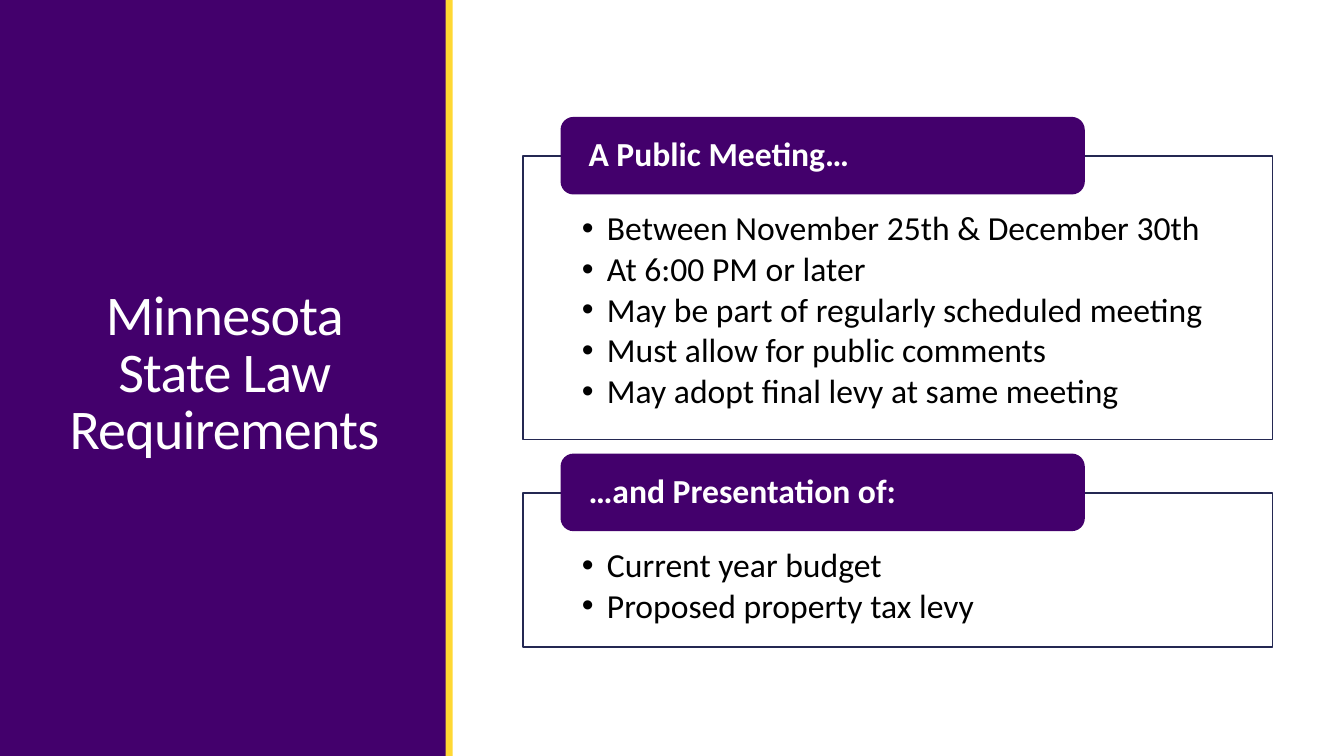
from pptx import Presentation
from pptx.dml.color import RGBColor
from pptx.enum.shapes import MSO_SHAPE as Preset
from pptx.enum.text import MSO_ANCHOR as Anchor, MSO_AUTO_SIZE as AutoSize, PP_ALIGN as Align
from pptx.util import Inches, Pt

PURPLE, GOLD, NAVY = "43006C", "FFD833", "242852"
WHITE, BLACK = "FFFFFF", "000000"


def colour(hex_code):
    return RGBColor.from_string(hex_code)


class Deck:
    font = "Calibri"
    heading_size, text_size = 40, 24

    def __init__(self, width, height):
        self.presentation = Presentation()
        self.presentation.slide_width = Inches(width)
        self.presentation.slide_height = Inches(height)
        layout = self.presentation.slide_layouts.get_by_name("Two Content")
        self.slide = self.presentation.slides.add_slide(layout)

    def place(self, shape, left, top, width, height):
        shape.left, shape.top = Inches(left), Inches(top)
        shape.width, shape.height = Inches(width), Inches(height)

    def frame(self, shape, anchor, insets):
        frame = shape.text_frame
        frame.word_wrap = True
        frame.auto_size = AutoSize.NONE
        frame.vertical_anchor = anchor
        frame.margin_left, frame.margin_top, frame.margin_right, frame.margin_bottom = map(Inches, insets)
        return frame

    def style(self, paragraph, size, hex_code, align=Align.LEFT, spacing=0.9, after=0, bold=False):
        paragraph.alignment = align
        paragraph.line_spacing = spacing
        paragraph.space_before, paragraph.space_after = Pt(0), Pt(after)
        font = paragraph.font
        font.name, font.size, font.bold = self.font, Pt(size), bold
        font.color.rgb = colour(hex_code)

    def block(self, preset, box, fill):
        block = self.slide.shapes.add_shape(preset, *map(Inches, box))
        block.shadow.inherit = False
        block.fill.solid()
        block.fill.fore_color.rgb = colour(fill)
        block.line.fill.background()
        return block

    def title(self, text, box):
        title = self.slide.shapes.title
        self.place(title, *box)
        frame = self.frame(title, Anchor.MIDDLE, (0.1, 0.05, 0.1, 0.05))
        frame.text = text
        paragraph = frame.paragraphs[0]
        self.style(paragraph, self.heading_size, WHITE, Align.CENTER, 0.85)
        paragraph.runs[0].font._element.set("spc", "-50")
        self.slide.shapes.element.append(title.element)

    def bullets(self, index, items, box):
        bullets = self.slide.placeholders[index]
        self.place(bullets, *box)
        bullets.line.color.rgb = colour(NAVY)
        bullets.line.width = Pt(1.25)
        frame = self.frame(bullets, Anchor.TOP, (0.58, 0.55, 0.58, 0.19))
        frame.text = "\n".join(items)
        for paragraph in frame.paragraphs:
            self.style(paragraph, self.text_size, BLACK, after=3.2)
            properties = paragraph._p.get_or_add_pPr()
            properties.set("marL", str(Inches(0.25)))
            properties.set("indent", str(Inches(-0.25)))

    def heading(self, text, box):
        heading = self.block(Preset.ROUNDED_RECTANGLE, box, PURPLE)
        frame = self.frame(heading, Anchor.MIDDLE, (0.24, 0.04, 0.24, 0.04))
        frame.text = text
        self.style(frame.paragraphs[0], self.text_size, WHITE, bold=True)

    def save(self):
        self.presentation.save("out.pptx")


def main():
    deck = Deck(13.33, 7.5)
    deck.block(Preset.RECTANGLE, (0, 0, 4.43, 7.5), PURPLE)
    deck.block(Preset.RECTANGLE, (4.42, 0, 0.07, 7.5), GOLD)
    deck.title("Minnesota State Law Requirements", (0.54, 0.57, 3.37, 6.31))

    requirements = [
        ("A Public Meeting…", 1.55, 2.81, [
            "Between November 25th & December 30th",
            "At 6:00 PM or later",
            "May be part of regularly scheduled meeting",
            "Must allow for public comments",
            "May adopt final levy at same meeting",
        ]),
        ("…and Presentation of:", 4.89, 1.53, [
            "Current year budget",
            "Proposed property tax levy",
        ]),
    ]
    for index, (heading, top, height, items) in enumerate(requirements, start=1):
        deck.bullets(index, items, (5.19, top, 7.43, height))
        deck.heading(heading, (5.56, top - 0.39, 5.2, 0.77))

    deck.save()


if __name__ == "__main__":
    main()
